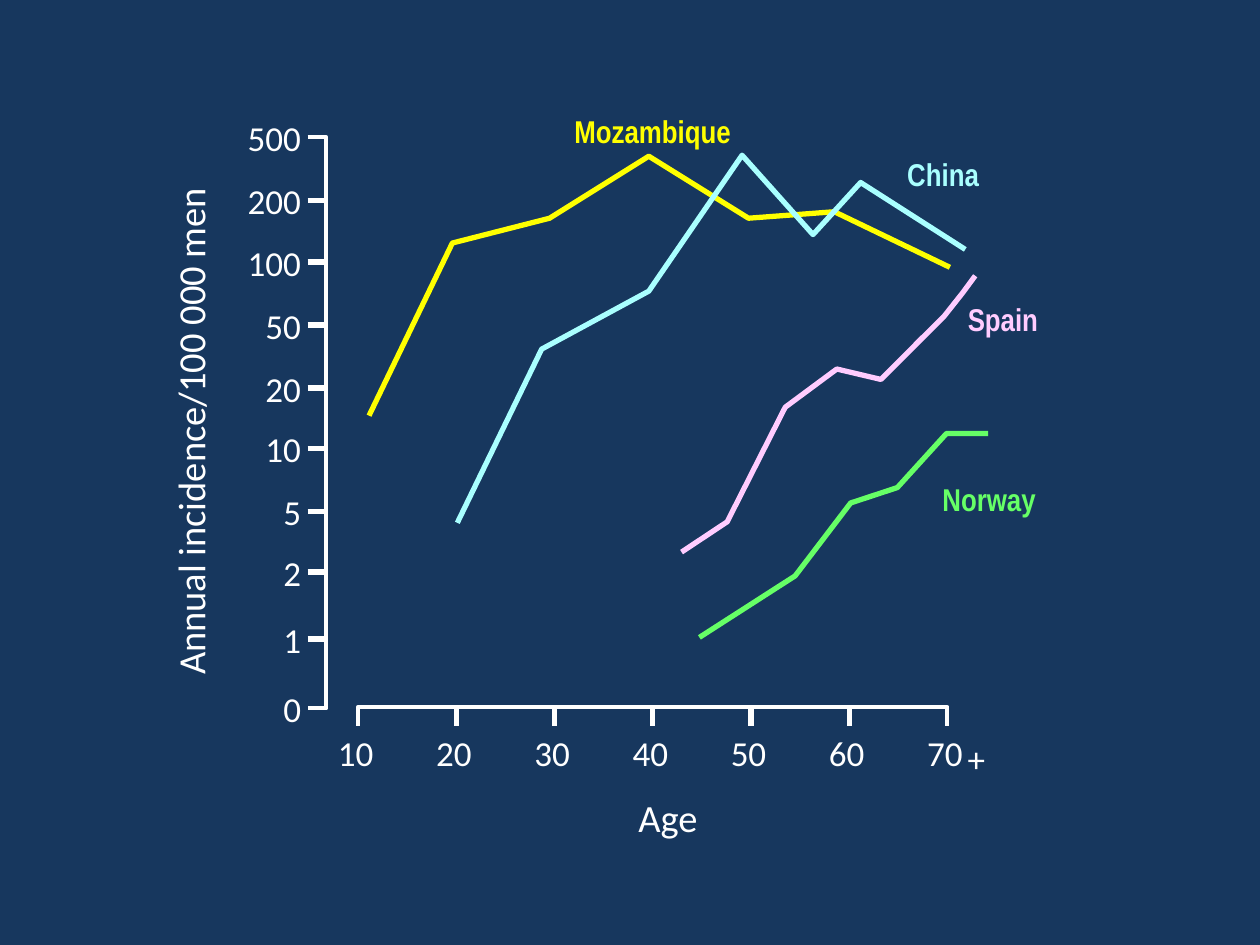
from lxml.etree import SubElement
from pptx import Presentation
from pptx.dml.color import RGBColor
from pptx.enum.shapes import MSO_CONNECTOR
from pptx.enum.text import MSO_ANCHOR, MSO_AUTO_SIZE, PP_ALIGN
from pptx.oxml.ns import qn
from pptx.util import Cm, Pt

COLORS = {
    "background": "17375E",
    "axis": "FFFFFF",
    "Mozambique": "FFFF00",
    "China": "A9FFFF",
    "Spain": "FFCCFF",
    "Norway": "66FF66",
}
INCIDENCE_TICKS = {
    "500": 0, "200": 1.27, "100": 2.51, "50": 3.78, "20": 5.05,
    "10": 6.27, "5": 7.54, "2": 8.76, "1": 10.11, "0": 11.51,
}
AGES = range(10, 80, 10)
AGE_STEP = 1.98
TICK = 0.38
CURVES = {
    "Norway": [(7.9, 10.08), (9.83, 8.84), (10.95, 7.37), (11.89, 7.06),
               (12.88, 5.97), (13.72, 5.97)],
    "Spain": [(7.54, 8.36), (8.46, 7.75), (9.63, 5.44), (10.67, 4.67),
              (11.56, 4.88), (12.83, 3.61), (13.21, 3.13), (13.46, 2.79)],
    "Mozambique": [(1.24, 5.61), (2.92, 2.13), (4.88, 1.63), (6.88, 0.38),
                   (8.89, 1.63), (10.62, 1.5), (12.95, 2.62)],
    "China": [(3.02, 7.77), (4.72, 4.27), (6.88, 3.1), (8.76, 0.36),
              (10.19, 1.96), (11.15, 0.91), (13.26, 2.26)],
}
SPAIN_JOINT = [(12.37, 3.99), (12.42, 4.06), (12.29, 4.19), (12.22, 4.14)]
COUNTRY_LABELS = {
    "Mozambique": (5.38, -0.51, 3.4),
    "China": (12.09, 0.36, 2.59),
    "Spain": (13.31, 3.28, 1.6),
    "Norway": (12.8, 6.91, 2.05),
}


def rgb(name):
    """Return the named colour."""
    return RGBColor.from_string(COLORS[name])


def add_label(page, text, left, top, width, height, size=20, color="axis",
              font="Calibri", bold=False, align=PP_ALIGN.CENTER):
    """Place one line of text without margins, measured in centimetres."""
    box = page.shapes.add_textbox(Cm(left), Cm(top), Cm(width), Cm(height))
    frame = box.text_frame
    frame.margin_left = frame.margin_right = 0
    frame.margin_top = frame.margin_bottom = 0
    frame.word_wrap = False
    frame.auto_size = MSO_AUTO_SIZE.SHAPE_TO_FIT_TEXT
    frame.vertical_anchor = MSO_ANCHOR.TOP
    frame.text = text
    para = frame.paragraphs[0]
    para.alignment = align
    span = para.runs[0]
    span.font.name = font
    span.font.size = Pt(size)
    span.font.bold = bold
    span.font.color.rgb = rgb(color)
    return box


def add_path(page, origin, points, color, weight=3, filled=False):
    """Draw an open line, or a filled outline, through points from the origin."""
    left, top = origin
    start, *rest = [(Cm(left + x), Cm(top + y)) for x, y in points]
    builder = page.shapes.build_freeform(*start)
    builder.add_line_segments(rest, close=filled)
    shape = builder.convert_to_shape()
    shape.shadow.inherit = False
    if filled:
        shape.fill.solid()
        shape.fill.fore_color.rgb = rgb(color)
        shape.line.fill.background()
    else:
        shape.fill.background()
        shape.line.color.rgb = rgb(color)
        shape.line.width = Pt(weight)


def add_tick(page, x, y, across=0, down=0):
    """Draw a tick mark on an axis."""
    tick = page.shapes.add_connector(
        MSO_CONNECTOR.STRAIGHT, Cm(x), Cm(y), Cm(x + across), Cm(y + down))
    tick.line.color.rgb = rgb("axis")
    tick.line.width = Pt(3)
    SubElement(tick._element.spPr, qn("a:effectLst"))


def add_incidence_axis(page, left, top):
    """Draw the vertical axis with its ticks, labels and title."""
    offsets = list(INCIDENCE_TICKS.values())
    end = offsets[-1]
    add_path(page, (left, top), [(0, 0), (TICK, 0), (TICK, end), (0, end)],
             "axis", 2.25)
    for y in offsets[1:-1]:
        add_tick(page, left, top + y, across=TICK)
    for text, y in INCIDENCE_TICKS.items():
        width = 0.39 * len(text)
        add_label(page, text, left - 0.13 - width, top + y - 0.42, width, 0.84,
                  align=PP_ALIGN.RIGHT)
    title = add_label(page, "Annual incidence/100 000 men", left - 7.7,
                      top + 5.46, 10.67, 0.94, size=22)
    title.rotation = 270


def add_age_axis(page, left, top):
    """Draw the horizontal axis with its ticks, labels and title."""
    end = AGE_STEP * (len(AGES) - 1)
    add_path(page, (left, top), [(0, TICK), (0, 0), (end, 0), (end, TICK)],
             "axis", 2.25)
    for index, age in enumerate(AGES):
        x = left + index * AGE_STEP
        if 0 < index < len(AGES) - 1:
            add_tick(page, x, top, down=TICK)
        add_label(page, str(age), x - 0.44, top + 0.49, 0.78, 0.84)
    add_label(page, "+", left + 12.26, top + 0.61, 0.41, 0.84)
    add_label(page, "Age", left + 5.56, top + 1.75, 1.37, 0.94, size=22)


def add_curves(page, left, top):
    """Draw each country's curve and its name."""
    for country, points in CURVES.items():
        add_path(page, (left, top), points, country)
    add_path(page, (left, top), SPAIN_JOINT, "Spain", filled=True)
    for country, (x, y, width) in COUNTRY_LABELS.items():
        add_label(page, country, left + x, top + y, width, 0.76, size=18,
                  color=country, font="Arial Narrow", bold=True,
                  align=PP_ALIGN.LEFT)


def add_incidence_plot(page, left, top):
    """Build the whole plot from its top left corner."""
    add_incidence_axis(page, left, top)
    add_age_axis(page, left + 1.02, top + 11.48)
    add_curves(page, left, top)


def main():
    """Build and save the deck."""
    deck = Presentation()
    deck.slide_width, deck.slide_height = Cm(25.4), Cm(19.05)
    page = deck.slides.add_slide(deck.slide_layouts[6])
    page.background.fill.solid()
    page.background.fill.fore_color.rgb = rgb("background")
    add_incidence_plot(page, 6.2, 2.77)
    deck.save("out.pptx")


if __name__ == "__main__":
    main()
